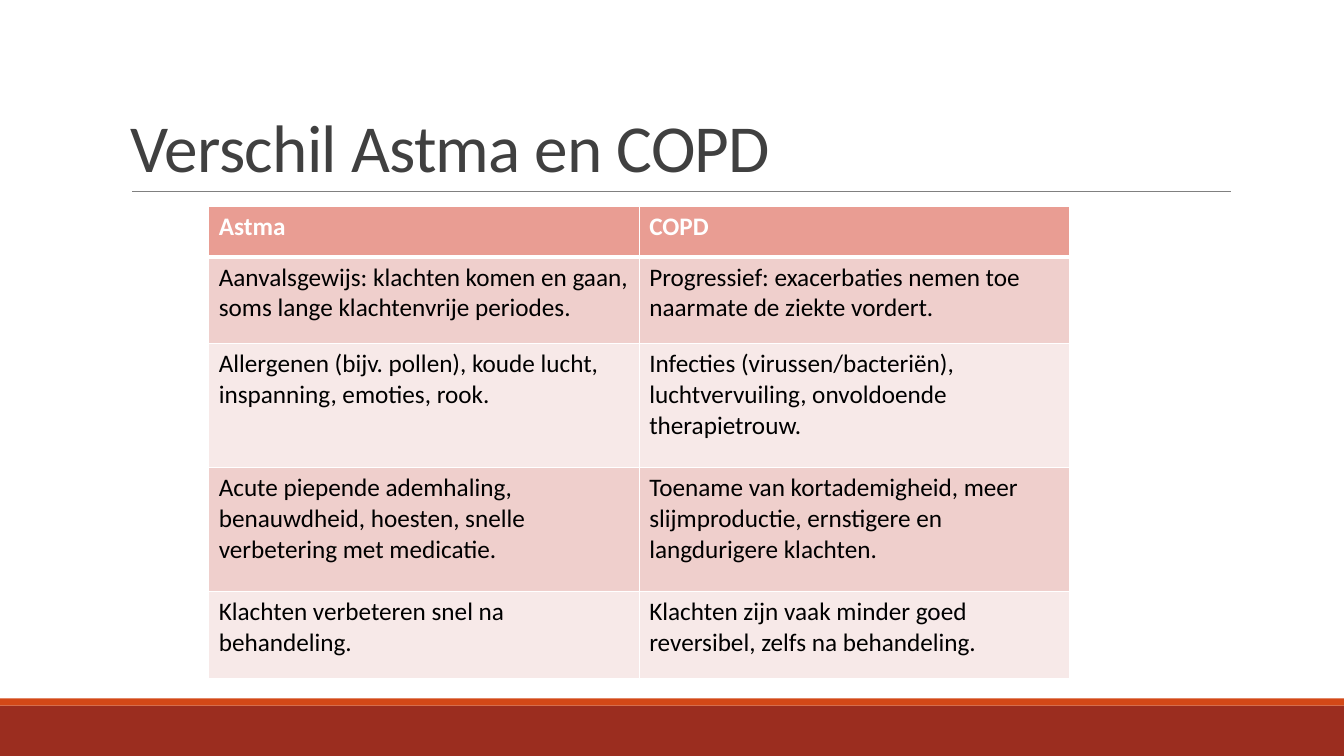
"""Build a slide that compares asthma and COPD in a table."""
import pptx
import pptx.dml.color
import pptx.enum.shapes
import pptx.enum.text
import pptx.oxml
import pptx.oxml.ns
import pptx.util
from pptx.util import Inches

TITLE = "Verschil Astma en COPD"
COMPARISON = [
    ("Astma", "COPD"),
    ("Aanvalsgewijs: klachten komen en gaan, soms lange klachtenvrije periodes.",
     "Progressief: exacerbaties nemen toe naarmate de ziekte vordert."),
    ("Allergenen (bijv. pollen), koude lucht, inspanning, emoties, rook.",
     "Infecties (virussen/bacteriën), luchtvervuiling, onvoldoende therapietrouw."),
    ("Acute piepende ademhaling, benauwdheid, hoesten, snelle verbetering met medicatie.",
     "Toename van kortademigheid, meer slijmproductie, ernstigere en langdurigere klachten."),
    ("Klachten verbeteren snel na behandeling.",
     "Klachten zijn vaak minder goed reversibel, zelfs na behandeling."),
]
ROW_HEIGHTS = [0.5, 0.86, 1.23, 1.23, 0.86]
COLUMN_WIDTH = 4.27
COLORS = {
    "footer": "9B2D1F", "stripe": "D34817", "rule": "808080", "title": "404040",
    "header": "E99D93", "odd": "EFCFCC", "even": "F7E9E8",
    "white": "FFFFFF", "black": "000000",
}
FOOTER_BANDS = [("footer", 7, 0.5), ("stripe", 6.93, 0.07)]


def rgb(name):
    return pptx.dml.color.RGBColor.from_string(COLORS[name])


def write(frame, text, size=18, color="black", bold=False, line_spacing=None, tracking=None):
    frame.word_wrap = True
    paragraph = frame.paragraphs[0]
    paragraph.alignment = pptx.enum.text.PP_ALIGN.LEFT
    if line_spacing:
        paragraph.line_spacing = line_spacing
    run = paragraph.add_run()
    run.text = text
    run.font.name = "Calibri"
    run.font.size = pptx.util.Pt(size)
    run.font.bold = bold
    run.font.color.rgb = rgb(color)
    if tracking is not None:
        run.font._element.set("spc", str(int(tracking * 100)))


def set_borders(cell, widths):
    properties = cell._tc.get_or_add_tcPr()
    for position, (side, width) in enumerate(widths.items()):
        border = pptx.oxml.parse_xml(
            f'<a:{side} {pptx.oxml.ns.nsdecls("a")} w="{pptx.util.Pt(width)}">'
            f'<a:solidFill><a:srgbClr val="{COLORS["white"]}"/></a:solidFill></a:{side}>')
        properties.insert(position, border)


def add_footer(slide, width):
    for color, top, height in FOOTER_BANDS:
        band = slide.shapes.add_shape(
            pptx.enum.shapes.MSO_SHAPE.RECTANGLE, 0, Inches(top), width, Inches(height))
        band.shadow.inherit = False
        band.fill.solid()
        band.fill.fore_color.rgb = rgb(color)
        band.line.fill.background()


def add_title(slide):
    rule = slide.shapes.add_connector(
        pptx.enum.shapes.MSO_CONNECTOR.STRAIGHT,
        Inches(1.31), Inches(1.9), Inches(12.21), Inches(1.9))
    rule.line.color.rgb = rgb("rule")
    rule.line.width = pptx.util.Pt(0.5)
    rule._element.spPr.append(
        pptx.oxml.parse_xml(f'<a:effectLst {pptx.oxml.ns.nsdecls("a")}/>'))
    title = slide.shapes.add_textbox(Inches(1.2), Inches(0.31), Inches(11), Inches(1.59))
    title.text_frame.vertical_anchor = pptx.enum.text.MSO_ANCHOR.BOTTOM
    write(title.text_frame, TITLE, size=48, color="title", line_spacing=0.85, tracking=-0.5)


def add_comparison(slide):
    columns = len(COMPARISON[0])
    table = slide.shapes.add_table(
        len(COMPARISON), columns, Inches(2.07), Inches(2.05),
        Inches(COLUMN_WIDTH * columns), Inches(sum(ROW_HEIGHTS))).table
    for column in table.columns:
        column.width = Inches(COLUMN_WIDTH)
    for index, (texts, height) in enumerate(zip(COMPARISON, ROW_HEIGHTS)):
        table.rows[index].height = Inches(height)
        is_header = index == 0
        fill = "header" if is_header else ("even", "odd")[index % 2]
        borders = {"lnL": 1, "lnR": 1, "lnT": 3 if index == 1 else 1,
                   "lnB": 3 if is_header else 1}
        for column, text in enumerate(texts):
            cell = table.cell(index, column)
            cell.fill.solid()
            cell.fill.fore_color.rgb = rgb(fill)
            set_borders(cell, borders)
            write(cell.text_frame, text, bold=is_header,
                  color="white" if is_header else "black")


def main():
    deck = pptx.Presentation()
    deck.slide_width, deck.slide_height = Inches(13.33), Inches(7.5)
    slide = deck.slides.add_slide(deck.slide_layouts[6])
    add_footer(slide, deck.slide_width)
    add_title(slide)
    add_comparison(slide)
    deck.save("out.pptx")


if __name__ == "__main__":
    main()
